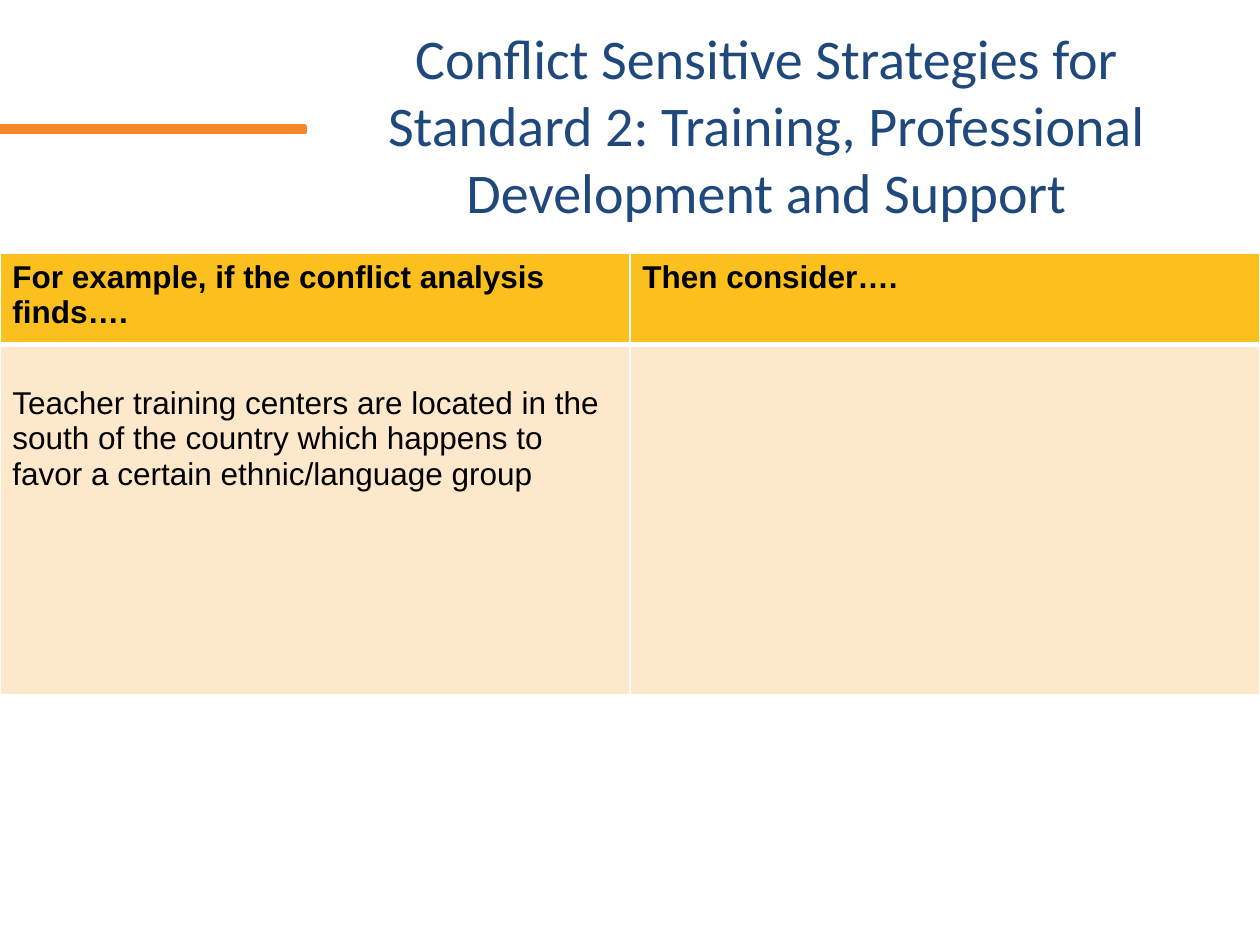
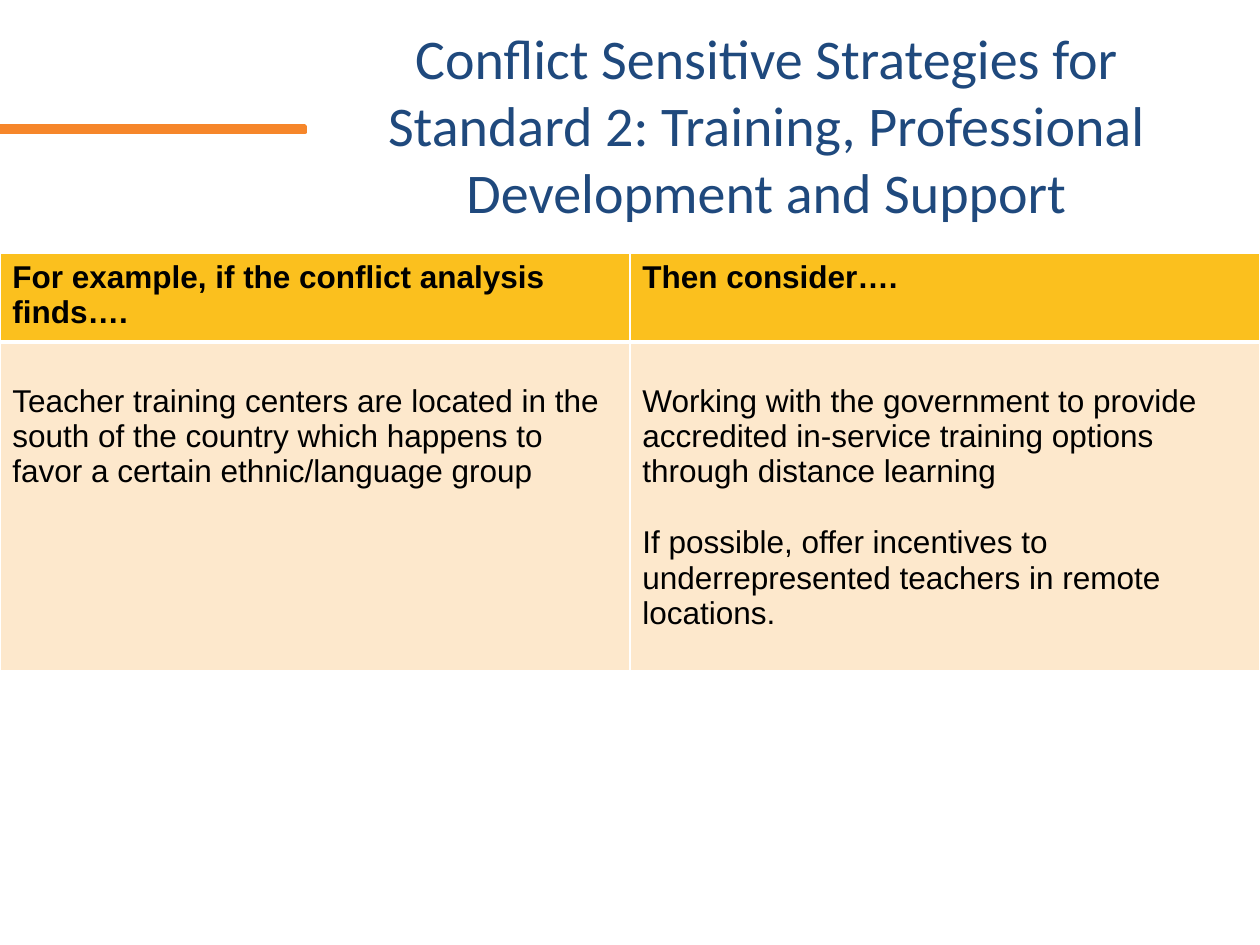
from dataclasses import dataclass

from lxml.etree import SubElement
from pptx import Presentation
from pptx.dml.color import RGBColor as Color
from pptx.enum.shapes import MSO_SHAPE as Preset
from pptx.enum.text import MSO_ANCHOR as Anchor, PP_ALIGN as Align
from pptx.oxml.ns import qn
from pptx.util import Cm, Pt


@dataclass(frozen=True)
class Theme:
    accent: str = "F6862A"
    title: str = "1F497D"
    header: str = "FBC01E"
    body: str = "FDE8CC"
    text: str = "000000"
    rule: str = "FFFFFF"
    title_font: str = "Calibri"
    table_font: str = "Arial"
    title_size: int = 32
    table_size: int = 18
    thin: int = 1
    thick: int = 3


class Deck:
    def __init__(self, theme):
        self.theme = theme
        self.presentation = Presentation()
        self.presentation.slide_width = Cm(25.4)
        self.presentation.slide_height = Cm(19.05)
        self.slide = None

    def add_slide(self):
        layout = self.presentation.slide_layouts[6]
        self.slide = self.presentation.slides.add_slide(layout)

    def add_accent_bar(self):
        shape = self.slide.shapes.add_shape(
            Preset.RECTANGLE, Cm(0), Cm(2.54), Cm(6.15), Cm(0.13))
        shape.shadow.inherit = False
        color = Color.from_string(self.theme.accent)
        shape.fill.solid()
        shape.fill.fore_color.rgb = color
        shape.line.color.rgb = color
        shape.line.width = Pt(2)

    def add_title(self, text):
        shape = self.slide.shapes.add_textbox(Cm(6.78), Cm(0.76), Cm(17.35), Cm(3.48))
        text_frame = shape.text_frame
        text_frame.word_wrap = True
        text_frame.vertical_anchor = Anchor.MIDDLE
        text_frame.text = text
        paragraph = text_frame.paragraphs[0]
        paragraph.alignment = Align.CENTER
        self.style_font(paragraph.font, self.theme.title_font,
                        self.theme.title_size, self.theme.title)

    def add_table(self, rows, heights):
        width = self.presentation.slide_width
        table = self.slide.shapes.add_table(
            len(rows), len(rows[0]), Cm(0), Cm(5.11), width, Cm(sum(heights))).table
        for row_index, (texts, height) in enumerate(zip(rows, heights)):
            table.rows[row_index].height = Cm(height)
            for column_index, text in enumerate(texts):
                self.fill_cell(table.cell(row_index, column_index), text, row_index == 0)

    def fill_cell(self, cell, text, is_header):
        theme = self.theme
        self.add_borders(cell, is_header)
        cell.fill.solid()
        cell.fill.fore_color.rgb = Color.from_string(theme.header if is_header else theme.body)
        cell.margin_left = cell.margin_right = Cm(0.25)
        cell.margin_top = Cm(0.13 if is_header else 0.84)
        cell.margin_bottom = Cm(0.13)
        cell.text_frame.text = text
        for index, paragraph in enumerate(cell.text_frame.paragraphs):
            if index:
                paragraph.space_before = Pt(20.5)
            self.style_font(paragraph.font, theme.table_font, theme.table_size,
                            theme.text, is_header)

    def add_borders(self, cell, is_header):
        thin, thick = self.theme.thin, self.theme.thick
        top, bottom = (thin, thick) if is_header else (thick, thin)
        properties = cell._tc.get_or_add_tcPr()
        for side, width in zip("LRTB", (thin, thin, top, bottom)):
            line = SubElement(properties, qn(f"a:ln{side}"), w=str(Pt(width)))
            fill = SubElement(line, qn("a:solidFill"))
            SubElement(fill, qn("a:srgbClr"), val=self.theme.rule)

    def style_font(self, font, name, size, color, bold=False):
        font.name = name
        font.size = Pt(size)
        font.bold = bold
        font.color.rgb = Color.from_string(color)


TITLE = ("Conflict Sensitive Strategies for Standard 2: Training, "
         "Professional Development and Support")
HEADINGS = ("For example, if the conflict analysis finds….", "Then consider….")
FINDING = ("Teacher training centers are located in the south of the country "
           "which happens to favor a certain ethnic/language group")
STRATEGIES = "\n".join((
    "Working with the government to provide accredited in-service training "
    "options through distance learning",
    "If possible, offer incentives to underrepresented teachers in remote locations.",
))


def main():
    deck = Deck(Theme())
    for response, heights in (("", (1.83, 7.06)), (STRATEGIES, (1.67, 6.63))):
        deck.add_slide()
        deck.add_accent_bar()
        deck.add_title(TITLE)
        deck.add_table((HEADINGS, (FINDING, response)), heights)
    deck.presentation.save("out.pptx")


if __name__ == "__main__":
    main()
